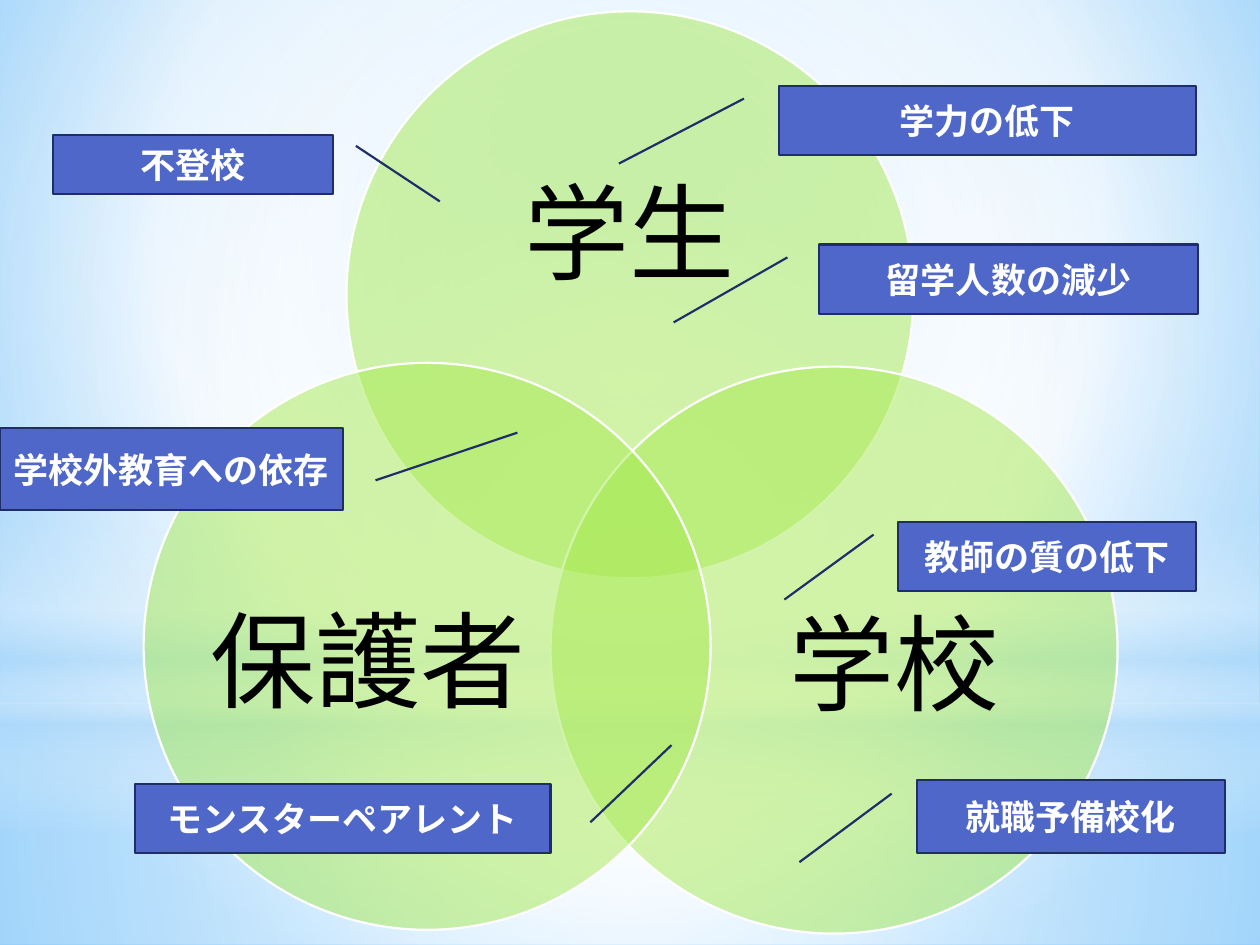
from lxml import etree
from pptx import Presentation
from pptx.dml.color import RGBColor
from pptx.enum.shapes import MSO_SHAPE
from pptx.enum.text import MSO_ANCHOR, PP_ALIGN
from pptx.oxml.ns import qn
from pptx.util import Inches, Pt

RECT, OVAL, NOTE = MSO_SHAPE.RECTANGLE, MSO_SHAPE.OVAL, MSO_SHAPE.LINE_CALLOUT_1
MIDDLE, CENTER = MSO_ANCHOR.MIDDLE, PP_ALIGN.CENTER
FONT = "Roboto"
HEX = {"white": "FFFFFF", "black": "000000", "haze": "B4DCFA", "sky": "9ED5FF",
       "deep": "5BB9FF", "lime": "A7EA52", "blue": "4E67C8", "navy": "1F2E69"}


def rgb(name):
    return RGBColor.from_string(HEX[name])


def inches(box):
    return [Inches(v) for v in box]


def add_alpha(color, share):
    etree.SubElement(color, qn("a:alpha"), val=str(share * 1000))


def blend(fill, host, stops, focus=None):
    """Gradient of (position, colour, opacity); radial if focus is given, else downward."""
    fill.background()
    blank = host.find(".//" + qn("a:noFill"))
    grad = etree.Element(qn("a:gradFill"), rotWithShape="1")
    items = etree.SubElement(grad, qn("a:gsLst"))
    for pos, name, share in stops:
        stop = etree.SubElement(items, qn("a:gs"), pos=str(pos * 1000))
        color = etree.SubElement(stop, qn("a:srgbClr"), val=HEX[name])
        if share < 100:
            add_alpha(color, share)
    if focus:
        way = etree.SubElement(grad, qn("a:path"), path="circle")
        sides = {side: str(v * 1000) for side, v in zip("ltrb", focus)}
        etree.SubElement(way, qn("a:fillToRect"), **sides)
    else:
        etree.SubElement(grad, qn("a:lin"), ang="5400000", scaled="0")
    blank.getparent().replace(blank, grad)


def add_form(shapes, kind, box):
    form = shapes.add_shape(kind, *inches(box))
    form.shadow.inherit = False
    return form


def set_text(frame, text, size, color, bold=False):
    frame.word_wrap = True
    frame.vertical_anchor = MIDDLE
    para = frame.paragraphs[0]
    para.text = text
    para.alignment = CENTER
    font = para.runs[0].font
    font.name, font.size, font.bold = FONT, Pt(size), bold
    font.color.rgb = rgb(color)
    return para


def draw_sky(slide, wide, high):
    blend(slide.background.fill, slide.element,
          [(0, "sky", 100), (60, "white", 100), (100, "deep", 100)], (20, 10, 20, 60))
    mid, edge = (50, 50, 50, 50), 5.58
    layers = [
        (RECT, (0, edge, wide, high - edge), mid,
         [(0, "white", 91), (37, "white", 76), (100, "haze", 79)]),
        (RECT, (0, 0, wide, edge), mid,
         [(0, "white", 89), (48, "white", 62), (100, "haze", 79)]),
        (RECT, (0, 4.12, wide, 2.5), None,
         [(0, "white", 0), (29, "white", 30), (45, "haze", 40),
          (55, "white", 26), (65, "haze", 60), (100, "white", 0)]),
        (OVAL, (0, 1.75, wide, edge), mid, [(0, "white", 100), (56, "white", 0)]),
    ]
    for kind, box, focus, stops in layers:
        layer = add_form(slide.shapes, kind, box)
        blend(layer.fill, layer.element, stops, focus)
        layer.line.fill.background()


def draw_venn(slide, left, top, size):
    group = slide.shapes.add_group_shape()
    # Circle offset, then label box, both from the corner of the diagram
    parts = [
        ("学生", 1.61, 0, (2.21, 0.79, 3.3, 2.02)),
        ("学校", 3.23, 2.82, (4.61, 3.98, 2.7, 2.48)),
        ("保護者", 0, 2.79, (0.43, 3.96, 2.7, 2.48)),
    ]
    for text, x, y, (dx, dy, wide, high) in parts:
        disc = add_form(group.shapes, OVAL, (left + x, top + y, size, size))
        disc.fill.solid()
        disc.fill.fore_color.rgb = rgb("lime")
        add_alpha(disc.element.spPr.find(".//" + qn("a:srgbClr")), 50)
        disc.line.color.rgb = rgb("white")
        disc.line.width = Pt(1.25)
        label = group.shapes.add_textbox(*inches((left + dx, top + dy, wide, high)))
        frame = label.text_frame
        frame.margin_left = frame.margin_right = frame.margin_top = frame.margin_bottom = 0
        set_text(frame, text, 60, "black").line_spacing = 0.9


def draw_note(slide, text, box, flip=False, tail=None):
    note = add_form(slide.shapes, NOTE, box)
    note.fill.solid()
    note.fill.fore_color.rgb = rgb("blue")
    note.line.color.rgb = rgb("navy")
    note.line.width = Pt(1.25)
    if flip:
        note.element.spPr.find(qn("a:xfrm")).set("flipH", "1")
    for i, value in enumerate(tail or ()):
        note.adjustments[i] = value
    set_text(note.text_frame, text, 20, "white", True)


def main():
    wide, high = 10, 7.5
    deck = Presentation()
    deck.slide_width, deck.slide_height = Inches(wide), Inches(high)
    slide = deck.slides.add_slide(deck.slide_layouts[6])
    draw_sky(slide, wide, high)
    draw_venn(slide, 1.14, 0.09, 4.5)

    # Problems, each with a pointer into its circle
    draw_note(slide, "学力の低下", (6.18, 0.68, 3.31, 0.55))
    draw_note(slide, "就職予備校化", (7.28, 6.19, 2.44, 0.58))
    draw_note(slide, "教師の質の低下", (7.13, 4.14, 2.36, 0.55))
    draw_note(slide, "モンスターペアレント", (1.07, 6.22, 3.3, 0.55), True,
              (0.556, -0.096, -0.558, -0.291))
    draw_note(slide, "学校外教育への依存", (0, 3.4, 2.72, 0.65), True,
              (0.634, -0.096, 0.052, -0.51))
    draw_note(slide, "不登校", (0.42, 1.07, 2.22, 0.47), True)
    draw_note(slide, "留学人数の減少", (6.5, 1.94, 3.01, 0.55))
    deck.save("out.pptx")


if __name__ == "__main__":
    main()
